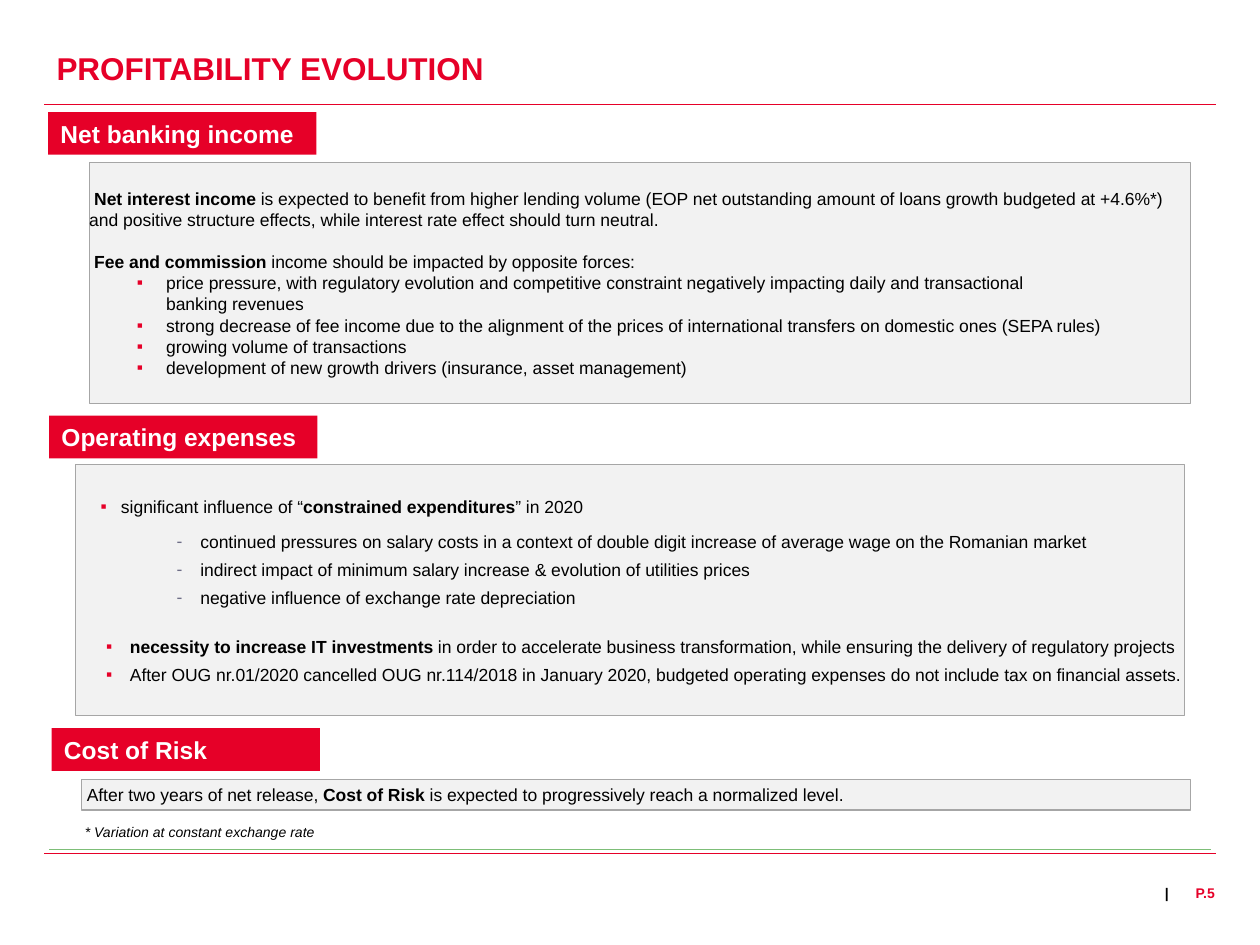
from lxml import etree
from pptx import Presentation
from pptx.dml.color import RGBColor
from pptx.enum import shapes, text
from pptx.oxml import ns
from pptx.util import Cm, Pt

COLORS = {"red": "E60028", "black": "000000", "white": "FFFFFF", "panel": "F2F2F2",
          "border": "A6A6A6", "dash": "6E6E87", "green": "7DBE78"}

# Paragraph styles: margin and first-line indent in cm, spacing in points
STYLES = {
    "lead": dict(indent=0.1),
    "next_lead": dict(indent=0.1, before=12),
    "force": dict(margin=1.55, indent=-0.59, bullet=("▪", "red")),
    "force_more": dict(margin=1.55),
    "driver": dict(margin=0.91, indent=-0.41, after=4, bullet=("▪", "red")),
    "detail": dict(margin=2.51, indent=-0.48, before=4, bullet=("-", "dash"), level=1),
    "next_driver": dict(margin=1.09, indent=-0.48, before=16, after=4, bullet=("▪", "red")),
    "last_driver": dict(margin=1.09, indent=-0.48, after=4, bullet=("▪", "red")),
}

# Headings: text, left, top (cm)
HEADINGS = [("Net banking income", 0.97, 2.26),
            ("Operating expenses", 0.99, 8.38),
            ("Cost of Risk", 1.04, 14.68)]
HEADING_SIZE = (5.41, 0.86)

# Panels: left, top, width, height (cm), then (style, runs); a run is (text, bold)
PANELS = [
    ((1.8, 3.28, 22.2, 4.85), [
        ("lead", [("Net interest income ", True),
                  ("is expected to benefit from higher lending volume (EOP net outstanding amount "
                   "of loans growth budgeted at +4.6%*) and positive structure effects, while "
                   "interest rate effect should turn neutral.", False)]),
        ("next_lead", [("Fee and commission ", True),
                       ("income should be impacted by opposite forces:", False)]),
        ("force", [("price pressure, with regulatory evolution and competitive constraint "
                    "negatively impacting daily and transactional", False)]),
        ("force_more", [("banking revenues", False)]),
        ("force", [("strong decrease of fee income due to the alignment of the prices of "
                    "international transfers on domestic ones (SEPA rules)", False)]),
        ("force", [("growing volume of transactions", False)]),
        ("force", [("development of new growth drivers (insurance, asset management)", False)]),
    ]),
    ((1.53, 9.37, 22.35, 5.06), [
        ("driver", [("significant influence of “", False), ("constrained expenditures", True),
                    ("” in 2020", False)]),
        ("detail", [("continued pressures on salary costs in a context of double digit increase "
                     "of average wage on the Romanian market", False)]),
        ("detail", [("indirect impact of minimum salary increase & evolution of utilities prices",
                     False)]),
        ("detail", [("negative influence of exchange rate depreciation", False)]),
        ("next_driver", [("necessity to increase IT investments ", True),
                         ("in order to accelerate business transformation, while ensuring the "
                          "delivery of regulatory projects", False)]),
        ("last_driver", [("After OUG nr.01/2020 cancelled OUG nr.114/2018 in January 2020, "
                          "budgeted operating expenses do not include tax on financial assets.",
                          False)]),
    ]),
    ((1.65, 15.72, 22.35, 0.61), [
        ("lead", [("After two years of net release, ", False), ("Cost of Risk ", True),
                  ("is expected to progressively reach a normalized level.", False)]),
    ]),
]

# Rules: left, right, y (cm), colour
RULES = [(0.89, 24.51, 2.11, "red"), (0.89, 24.51, 17.2, "red"), (0.99, 24.41, 17.12, "green")]


def rgb(name):
    return RGBColor.from_string(COLORS[name])


def add_run(p, words, size, color, bold=False, italic=False):
    r = p.add_run()
    r.text = words
    r.font.name = "Arial"
    r.font.size = Pt(size)
    r.font.bold = bold
    r.font.italic = italic
    r.font.color.rgb = rgb(color)


def set_frame(s, insets=(0, 0, 0, 0), middle=False, wrap=True):
    tf = s.text_frame
    tf.word_wrap = wrap
    tf.margin_left, tf.margin_top, tf.margin_right, tf.margin_bottom = map(Cm, insets)
    tf.vertical_anchor = text.MSO_ANCHOR.MIDDLE if middle else text.MSO_ANCHOR.TOP
    tf.paragraphs[0].alignment = text.PP_ALIGN.LEFT
    return tf


def add_block(slide, box, fill=None, line=None, kind=shapes.MSO_SHAPE.RECTANGLE):
    s = slide.shapes.add_shape(kind, *map(Cm, box))
    s.shadow.inherit = False
    if fill:
        s.fill.solid()
        s.fill.fore_color.rgb = rgb(fill)
    else:
        s.fill.background()
    if line:
        s.line.color.rgb = rgb(line)
        s.line.width = Pt(0.75)
    else:
        s.line.fill.background()
    return s


def add_label(slide, box, words, size, color, align, middle=False, wrap=True):
    tf = set_frame(slide.shapes.add_textbox(*map(Cm, box)), middle=middle, wrap=wrap)
    p = tf.paragraphs[0]
    p.alignment = align
    add_run(p, words, size, color, bold=True)


def style_paragraph(p, margin=0, indent=0, before=0, after=0, bullet=None, level=0):
    p.alignment = text.PP_ALIGN.LEFT
    p.level = level
    p.space_before = Pt(before)
    p.space_after = Pt(after)
    pPr = p._p.get_or_add_pPr()
    pPr.set("marL", str(Cm(margin)))
    pPr.set("indent", str(Cm(indent)))
    if bullet:
        char, color = bullet
        bu_color = etree.SubElement(pPr, ns.qn("a:buClr"))
        etree.SubElement(bu_color, ns.qn("a:srgbClr"), val=COLORS[color])
        etree.SubElement(pPr, ns.qn("a:buFont"), typeface="Arial")
        etree.SubElement(pPr, ns.qn("a:buChar"), char=char)


def add_panel(slide, box, paragraphs):
    tf = set_frame(add_block(slide, box, "panel", "border"), middle=True)
    for i, (style, runs) in enumerate(paragraphs):
        p = tf.add_paragraph() if i else tf.paragraphs[0]
        style_paragraph(p, **STYLES[style])
        for words, bold in runs:
            add_run(p, words, 10, "black", bold)


def add_rule(slide, left, right, y, color):
    c = slide.shapes.add_connector(shapes.MSO_CONNECTOR.STRAIGHT,
                                   Cm(left), Cm(y), Cm(right), Cm(y))
    c.line.color.rgb = rgb(color)
    c.line.width = Pt(0.5)
    etree.SubElement(c._element.spPr, ns.qn("a:effectLst"))


def main():
    prs = Presentation()
    prs.slide_width, prs.slide_height = Cm(25.4), Cm(19.05)
    slide = prs.slides.add_slide(prs.slide_layouts[6])
    align = text.PP_ALIGN

    for rule in RULES:
        add_rule(slide, *rule)
    add_label(slide, (1.14, 0.99, 23.29, 0.76), "PROFITABILITY EVOLUTION", 18, "red",
              align.LEFT, middle=True)
    for box, paragraphs in PANELS:
        add_panel(slide, box, paragraphs)
    for words, left, top in HEADINGS:
        s = add_block(slide, (left, top, *HEADING_SIZE), "red")
        tf = set_frame(s, insets=(0.25, 0.13, 0.25, 0.13))
        add_run(tf.paragraphs[0], words, 14, "white", bold=True)

    note = add_block(slide, (1.65, 16.28, 5.79, 1.27), kind=shapes.MSO_SHAPE.ROUNDED_RECTANGLE)
    tf = set_frame(note, insets=(0, 0, 0, 0.3), middle=True)
    add_run(tf.paragraphs[0], "* Variation at constant exchange rate", 8, "black", italic=True)

    add_label(slide, (23.42, 17.83, 0.2, 1.22), "|", 8, "black", align.CENTER, wrap=False)
    add_label(slide, (23.5, 17.83, 0.99, 1.22), "P.5", 8, "red", align.RIGHT)
    prs.save("out.pptx")


if __name__ == "__main__":
    main()
